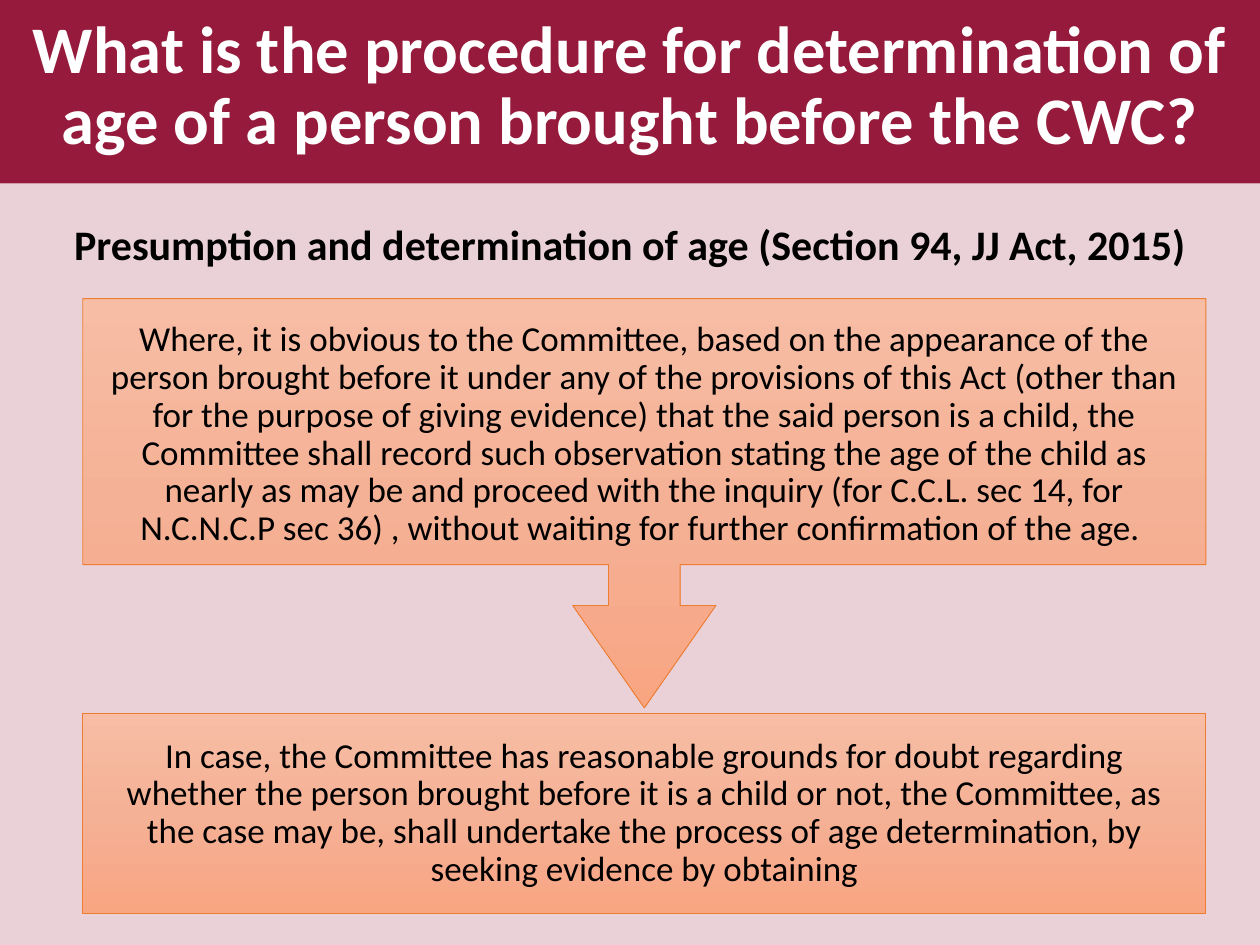
from copy import deepcopy

from lxml.etree import SubElement
from pptx import Presentation
from pptx.dml.color import RGBColor
from pptx.enum.shapes import MSO_SHAPE
from pptx.enum.text import MSO_ANCHOR, PP_ALIGN
from pptx.oxml.ns import qn
from pptx.util import Cm, Pt

WINE = RGBColor(0x95, 0x1A, 0x3B)
WHITE = RGBColor(0xFF, 0xFF, 0xFF)
BLACK = RGBColor(0, 0, 0)
ORANGE = RGBColor(0xED, 0x7D, 0x31)
PEACHES = (
    RGBColor(0xF7, 0xBD, 0xA5),
    RGBColor(0xF5, 0xB1, 0x96),
    RGBColor(0xF8, 0xA5, 0x82),
)
WIDTH, HEIGHT, BAND = 25.4, 19.05, 3.7
LEFT, SPAN = 1.67, 22.64

TITLE = "What is the procedure for determination of age of a person brought before the CWC?"
HEADING = "Presumption and determination of age (Section 94, JJ Act, 2015)"
OBVIOUS = (
    "Where, it is obvious to the Committee, based on the appearance of the person "
    "brought before it under any of the provisions of this Act (other than for the "
    "purpose of giving evidence) that the said person is a child, the Committee shall "
    "record such observation stating the age of the child as nearly as may be and "
    "proceed with the inquiry (for C.C.L. sec 14, for N.C.N.C.P sec 36) , without "
    "waiting for further confirmation of the age. "
)
DOUBT = (
    "In case, the Committee has reasonable grounds for doubt regarding whether the "
    "person brought before it is a child or not, the Committee, as the case may be, "
    "shall undertake the process of age determination, by seeking evidence by obtaining"
)


def write(shape, text, size, color, bold=False, spacing=0.9):
    """Write one centred paragraph into a shape."""
    frame = shape.text_frame
    frame.word_wrap = True
    frame.vertical_anchor = MSO_ANCHOR.MIDDLE
    para = frame.paragraphs[0]
    para.text = text
    para.alignment = PP_ALIGN.CENTER
    para.line_spacing = spacing
    font = para.font
    font.name, font.size, font.bold = "Calibri", Pt(size), bold
    font.color.rgb = color


def add_band(slide, top, height, alpha=None):
    """Add a full-width wine band, see-through if alpha is a percentage."""
    band = slide.shapes.add_shape(
        MSO_SHAPE.RECTANGLE, 0, Cm(top), Cm(WIDTH), Cm(height)
    )
    band.shadow.inherit = False
    band.fill.solid()
    band.fill.fore_color.rgb = WINE
    band.line.fill.background()
    if alpha:
        tint = band._element.spPr.find(qn("a:solidFill"))[0]
        SubElement(tint, qn("a:alpha"), val=str(alpha * 1000))


def add_label(slide, top, height, *style):
    """Add a full-width line of text."""
    box = slide.shapes.add_textbox(0, Cm(top), Cm(WIDTH), Cm(height))
    write(box, *style)


def shade(shape):
    """Fill a shape with the peach gradient, from top to bottom."""
    fill = shape.fill
    fill.gradient()
    fill.gradient_angle = 270
    stops = shape._element.spPr.find(qn("a:gradFill")).find(qn("a:gsLst"))
    stops.insert(1, deepcopy(stops[0]))
    for index, (stop, color) in enumerate(zip(fill.gradient_stops, PEACHES)):
        stop.position = index / 2
        stop.color.rgb = color


def add_step(slide, kind, top, height, text, insets):
    """Add an outlined step of the procedure and return it."""
    step = slide.shapes.add_shape(kind, Cm(LEFT), Cm(top), Cm(SPAN), Cm(height))
    step.shadow.inherit = False
    shade(step)
    step.line.color.rgb = ORANGE
    step.line.width = Pt(0.5)
    write(step, text, 20, BLACK)
    frame = step.text_frame
    frame.paragraphs[0].space_after = Pt(7)
    side, upper, lower = map(Cm, insets)
    frame.margin_left = frame.margin_right = side
    frame.margin_top, frame.margin_bottom = upper, lower
    return step


def main():
    """Build the slide and save it."""
    deck = Presentation()
    deck.slide_width, deck.slide_height = Cm(WIDTH), Cm(HEIGHT)
    slide = deck.slides.add_slide(deck.slide_layouts[6])
    add_band(slide, 0, BAND)
    add_band(slide, BAND, HEIGHT - BAND, 20)
    add_label(slide, 0.33, 2.87, TITLE, 38, WHITE, True)
    add_label(slide, 4.27, 1.27, HEADING, 24, BLACK, True, 1.0)
    callout = add_step(
        slide, MSO_SHAPE.DOWN_ARROW_CALLOUT, 6.02, 8.25, OBVIOUS, (0.38, 0.38, 0.25)
    )
    for index, ratio in enumerate((0.175, 0.175, 0.25, 0.65)):
        callout.adjustments[index] = ratio
    add_step(slide, MSO_SHAPE.RECTANGLE, 14.38, 4.04, DOUBT, (0.53, 0.1, 0.1))
    deck.save("out.pptx")


if __name__ == "__main__":
    main()
